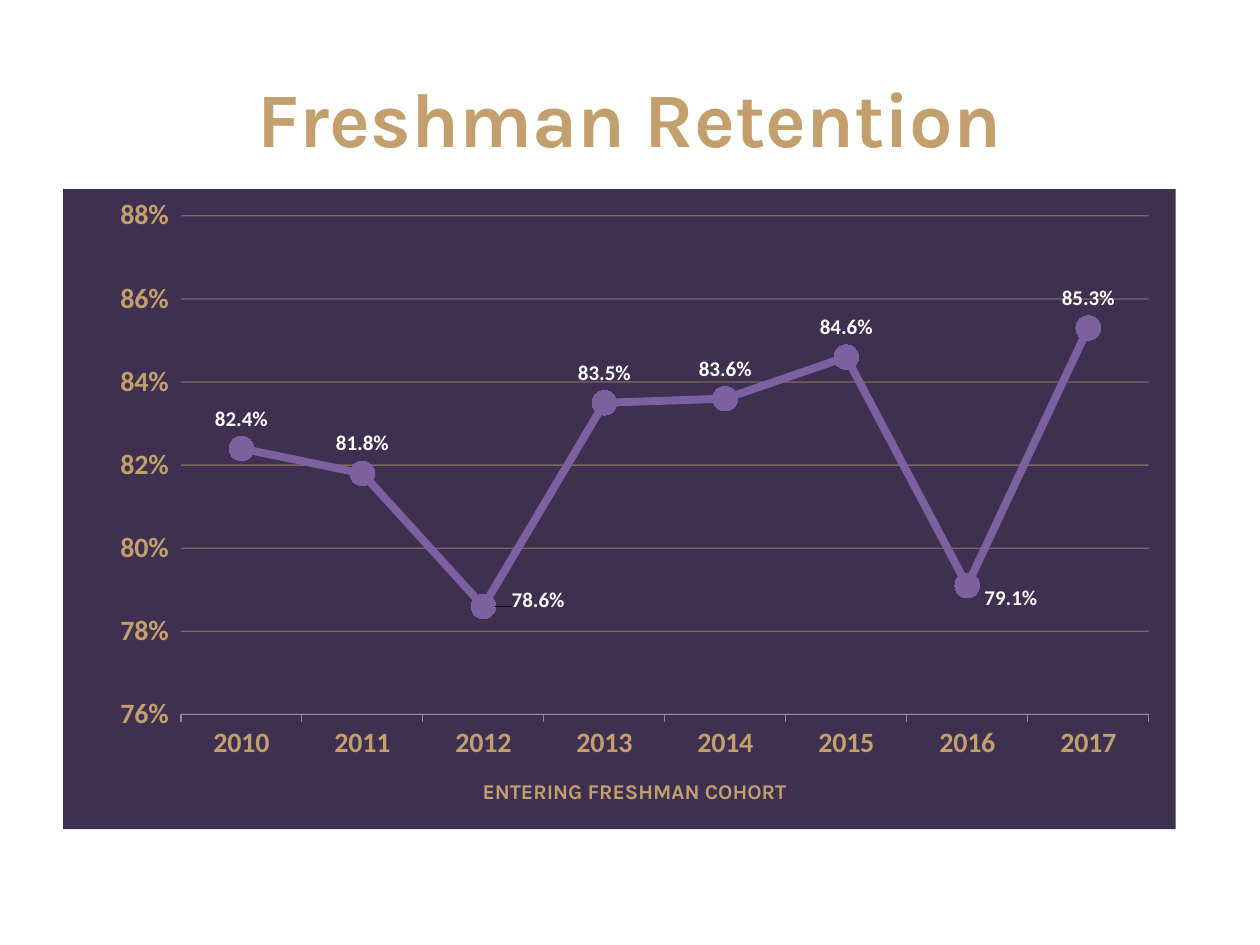
from lxml import etree
from pptx import Presentation
from pptx import util as u
from pptx.chart.data import CategoryChartData
from pptx.dml.color import RGBColor
from pptx.enum import chart as ch, text
from pptx.oxml import parse_xml
from pptx.oxml.ns import nsdecls, qn

# Content
TITLE = "Freshman Retention"
AXIS_TITLE = "ENTERING FRESHMAN COHORT"
RETENTION = {
    "2010": 0.824, "2011": 0.818, "2012": 0.786, "2013": 0.835,
    "2014": 0.836, "2015": 0.846, "2016": 0.791, "2017": 0.853,
}
# Low points carry their label on the right, nudged by a share of the chart
SIDE_LABELS = {"2012": (0.01, -0.01), "2016": (0, 0.02)}
PLOT_BOX = {"x": 0.106, "y": 0.042, "w": 0.87, "h": 0.779}

THEME = {
    "gold": "C49F6E", "panel": "3E3050", "line": "7D60A0",
    "label": "FFFFFF", "axis": "8C8C8C",
    "head_font": "Karla", "body_font": "Calibri",
    "title": 44, "tick": 16, "small": 12,
}


def color(name):
    return RGBColor.from_string(THEME[name])


def style(font, size, tint, face="body_font"):
    font.size = u.Pt(THEME[size])
    font.bold = True
    font.name = THEME[face]
    font.color.rgb = color(tint)


def panel_fill():
    return parse_xml(
        f'<c:spPr {nsdecls("c", "a")}><a:solidFill><a:srgbClr val="{THEME["panel"]}"/>'
        '</a:solidFill><a:ln><a:noFill/></a:ln></c:spPr>')


def manual_layout(head, **box):
    values = "".join(f'<c:{k} val="{v}"/>' for k, v in box.items())
    return parse_xml(f'<c:layout {nsdecls("c")}><c:manualLayout>{head}{values}'
                     '</c:manualLayout></c:layout>')


prs = Presentation()
prs.slide_width, prs.slide_height = u.Inches(10), u.Inches(7.5)
s = prs.slides.add_slide(prs.slide_layouts[5])

# Title
title = s.shapes.title
title.left, title.top, title.width, title.height = map(u.Inches, (0.5, 0.3, 9, 1.25))
tf = title.text_frame
tf.text = TITLE
tf.vertical_anchor = text.MSO_ANCHOR.MIDDLE
p = tf.paragraphs[0]
p.alignment = text.PP_ALIGN.CENTER
style(p.runs[0].font, "title", "gold", "head_font")

# Chart
data = CategoryChartData(number_format="0.0%")
data.categories = list(RETENTION)
data.add_series("Series 1", list(RETENTION.values()))
chart = s.shapes.add_chart(
    ch.XL_CHART_TYPE.LINE_MARKERS, *map(u.Inches, (0.5, 1.5, 8.83, 5.08)), data).chart
chart.has_legend = False
chart.has_title = False
chart.font.name = THEME["body_font"]
chart.font.size = u.Pt(10)

# Panel and plot area
space = chart.element
space.find(qn("c:chart")).addnext(panel_fill())
area = space.find(".//" + qn("c:plotArea"))
for old in area.findall(qn("c:layout")):
    area.remove(old)
modes = ('<c:layoutTarget val="inner"/><c:xMode val="edge"/><c:yMode val="edge"/>')
area.insert(0, manual_layout(modes, **PLOT_BOX))
area.append(panel_fill())

# Axes
years, rates = chart.category_axis, chart.value_axis
for axis in (years, rates):
    style(axis.tick_labels.font, "tick", "gold")
    axis.major_tick_mark = ch.XL_TICK_MARK.OUTSIDE
    axis.minor_tick_mark = ch.XL_TICK_MARK.NONE
years.has_major_gridlines = False
years.format.line.color.rgb = color("axis")
years.format.line.width = u.Pt(0.75)
years.axis_title.text_frame.text = AXIS_TITLE
style(years.axis_title.text_frame.paragraphs[0].runs[0].font, "small", "gold", "head_font")

rates.minimum_scale, rates.maximum_scale, rates.major_unit = 0.76, 0.88, 0.02
rates.tick_labels.number_format = "0%"
rates.tick_labels.number_format_is_linked = False
rates.format.line.fill.background()
grid = rates.major_gridlines.format.line
grid.color.rgb = color("gold")
grid.width = u.Pt(0.75)
tint = rates.major_gridlines._xAx.find(".//" + qn("c:majorGridlines")).find(
    ".//" + qn("a:srgbClr"))
etree.SubElement(tint, qn("a:alpha")).set("val", "50000")

# Series and labels
chart.plots[0].vary_by_categories = False
series = chart.plots[0].series[0]
series.smooth = False
series.format.line.color.rgb = color("line")
series.format.line.width = u.Pt(4.5)
marker = series.marker
marker.style, marker.size = ch.XL_MARKER_STYLE.CIRCLE, 14
marker.format.fill.solid()
marker.format.fill.fore_color.rgb = color("line")
marker.format.line.fill.background()

labels = series.data_labels
labels.show_value = True
labels.number_format, labels.number_format_is_linked = "0.0%", False
labels.position = ch.XL_LABEL_POSITION.ABOVE
style(labels.font, "small", "label")
for i, year in enumerate(RETENTION):
    if year in SIDE_LABELS:
        label = series.points[i].data_label
        style(label.font, "small", "label")
        label.position = ch.XL_LABEL_POSITION.RIGHT
        dx, dy = SIDE_LABELS[year]
        idx = labels._element.find(f'{qn("c:dLbl")}/{qn("c:idx")}[@val="{i}"]')
        idx.addnext(manual_layout("", x=dx, y=dy))

prs.save("out.pptx")
